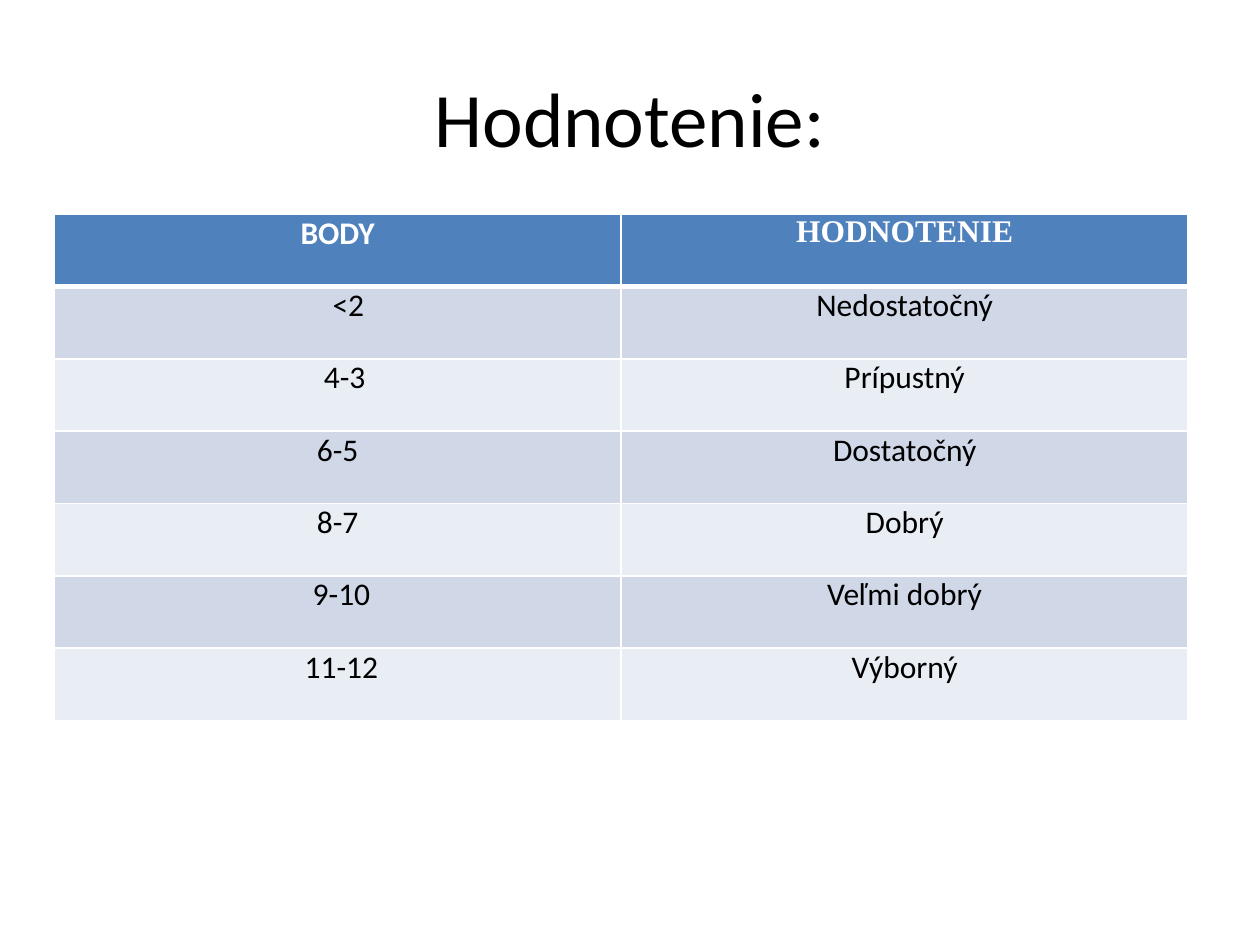
import pptx
import pptx.util
import pptx.dml.color
import pptx.enum.text
import pptx.oxml.ns
from lxml import etree
from dataclasses import dataclass

Inches, Pt = pptx.util.Inches, pptx.util.Pt
ALIGN = pptx.enum.text.PP_ALIGN.CENTER
MIDDLE = pptx.enum.text.MSO_ANCHOR.MIDDLE


@dataclass(frozen=True)
class Theme:
    font: str = "Calibri"
    serif: str = "Times New Roman"
    ink: str = "000000"
    paper: str = "FFFFFF"
    head: str = "4F81BD"
    bands: tuple = ("D0D8E8", "E9EDF4")
    title: int = 44
    body: int = 18
    line: int = 1
    rule: int = 3
    pad: float = 0.07


THEME = Theme()
HEADS = ("BODY", "HODNOTENIE")
# points, grade, extra left indent of the points in inches
GRADES = (
    ("<2", "Nedostatočný", 0.17),
    ("4-3", "Prípustný", 0.11),
    ("6-5", "Dostatočný", 0),
    ("8-7", "Dobrý", 0),
    ("9-10", "Veľmi dobrý", 0.06),
    ("11-12", "Výborný", 0.06),
)


def color(code):
    return pptx.dml.color.RGBColor.from_string(code)


def write(frame, text, size, ink, font=THEME.font, bold=False):
    frame.text = text
    para = frame.paragraphs[0]
    para.alignment = ALIGN
    face = para.runs[0].font
    face.name, face.size, face.bold = font, Pt(size), bold
    face.color.rgb = color(ink)


def border(cell, top, bottom):
    """Draw the four cell edges; top and bottom widths are in points."""
    props = cell._tc.get_or_add_tcPr()
    edges = (("L", THEME.line), ("R", THEME.line), ("T", top), ("B", bottom))
    for side, width in edges:
        line = etree.SubElement(
            props, pptx.oxml.ns.qn(f"a:ln{side}"), w=str(Pt(width)))
        fill = etree.SubElement(line, pptx.oxml.ns.qn("a:solidFill"))
        etree.SubElement(fill, pptx.oxml.ns.qn("a:srgbClr"), val=THEME.paper)


def paint(cell, fill, top, bottom, indent=0):
    border(cell, top, bottom)
    cell.fill.solid()
    cell.fill.fore_color.rgb = color(fill)
    cell.margin_left = Inches(THEME.pad + indent)
    cell.margin_right = Inches(THEME.pad)
    cell.margin_top = cell.margin_bottom = 0


def add_title(slide, box, text):
    title = slide.shapes.title
    title.left, title.top, title.width, title.height = box
    title.text_frame.vertical_anchor = MIDDLE
    write(title.text_frame, text, THEME.title, THEME.ink)


def add_grades(slide, box):
    count = len(GRADES) + 1
    table = slide.shapes.add_table(count, len(HEADS), *box).table
    for row in table.rows:
        row.height = int(box[3] / count)

    for col, (text, font) in enumerate(zip(HEADS, (THEME.font, THEME.serif))):
        cell = table.cell(0, col)
        paint(cell, THEME.head, THEME.line, THEME.rule)
        write(cell.text_frame, text, THEME.body, THEME.paper, font, True)

    for row, (points, grade, indent) in enumerate(GRADES, 1):
        fill = THEME.bands[(row - 1) % 2]
        top = THEME.rule if row == 1 else THEME.line
        for col, (text, shift) in enumerate(((points, indent), (grade, 0))):
            cell = table.cell(row, col)
            paint(cell, fill, top, THEME.line, shift)
            write(cell.text_frame, text, THEME.body, THEME.ink)


def main():
    deck = pptx.Presentation()
    deck.slide_width, deck.slide_height = Inches(10), Inches(7.5)
    wide, high = deck.slide_width, deck.slide_height
    slide = deck.slides.add_slide(deck.slide_layouts[5])

    def share(left, top, width, height):
        return (int(wide * left), int(high * top),
                int(wide * width), int(high * height))

    add_title(slide, share(0.05, 0.04, 0.9, 1 / 6), "Hodnotenie:")
    add_grades(slide, share(0.043, 1.7 / 7.5, 0.9, 4.02 / 7.5))
    deck.save("out.pptx")


if __name__ == "__main__":
    main()
